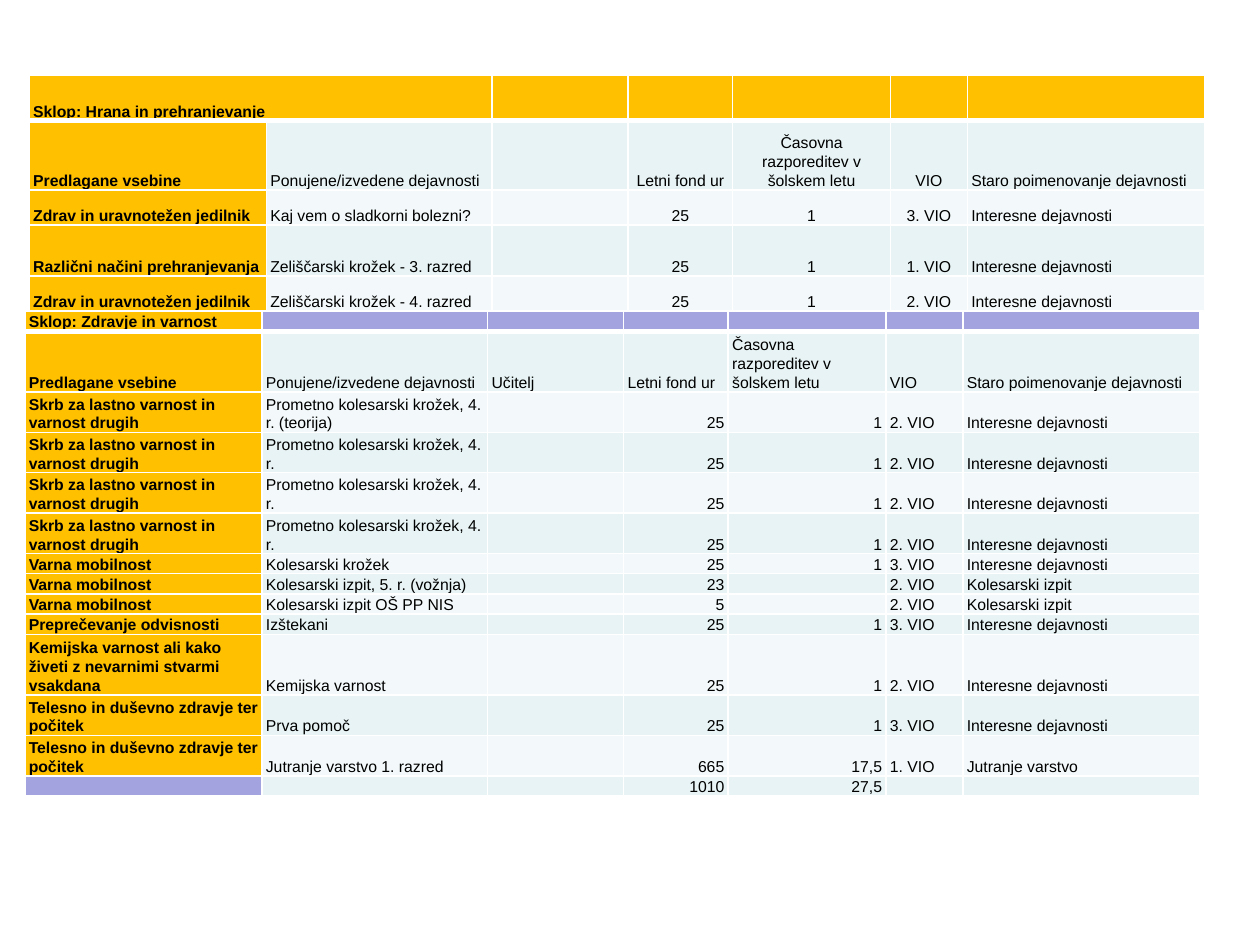
from lxml.etree import SubElement
from pptx import Presentation
from pptx.dml.color import RGBColor
from pptx.enum.text import MSO_ANCHOR, PP_ALIGN
from pptx.oxml.ns import qn
from pptx.util import Cm, Pt

GOLD = RGBColor(0xFF, 0xC0, 0x00)
LILAC = RGBColor(0xA3, 0xA3, 0xE0)
MINT = RGBColor(0xE7, 0xF3, 0xF4)
PALE = RGBColor(0xF3, 0xF9, 0xFA)
BLACK = RGBColor(0, 0, 0)
WHITE = RGBColor(0xFF, 0xFF, 0xFF)

COLS = [4.78, 4.55, 2.74, 2.11, 3.18, 1.55, 4.78]
CELL = {"vertical_anchor": MSO_ANCHOR.BOTTOM, "margin_left": Cm(0.08),
        "margin_right": Cm(0.08), "margin_top": 0, "margin_bottom": 0}
LINE = Cm(9.78) / 24
CLUB = "Interesne dejavnosti"
HEAD = ["Predlagane vsebine", "Ponujene/izvedene dejavnosti", "", "Letni fond ur",
        "Časovna razporeditev v šolskem letu", "VIO", "Staro poimenovanje dejavnosti"]
MENU = "Zdrav in uravnotežen jedilnik"
SAFETY = "Skrb za lastno varnost in varnost drugih"
BIKE = "Prometno kolesarski krožek, 4. r."
MOBILITY = "Varna mobilnost"
REST = "Telesno in duševno zdravje ter počitek"

food_rows = [
    ["Sklop: Hrana in prehranjevanje"] + [""] * 6,
    HEAD,
    [MENU, "Kaj vem o sladkorni bolezni?", "", "25", "1", "3. VIO", CLUB],
    ["Različni načini prehranjevanja", "Zeliščarski krožek - 3. razred", "",
     "25", "1", "1. VIO", CLUB],
    [MENU, "Zeliščarski krožek - 4. razred", "", "25", "1", "2. VIO", CLUB],
]
health_rows = [
    ["Sklop: Zdravje in varnost"] + [""] * 6,
    HEAD[:2] + ["Učitelj"] + HEAD[3:],
    [SAFETY, BIKE + " (teorija)", "", "25", "1", "2. VIO", CLUB],
    *[[SAFETY, BIKE, "", "25", "1", "2. VIO", CLUB]] * 3,
    [MOBILITY, "Kolesarski krožek", "", "25", "1", "3. VIO", CLUB],
    [MOBILITY, "Kolesarski izpit, 5. r. (vožnja)", "", "23", "", "2. VIO", "Kolesarski izpit"],
    [MOBILITY, "Kolesarski izpit OŠ PP NIS", "", "5", "", "2. VIO", "Kolesarski izpit"],
    ["Preprečevanje odvisnosti", "Izštekani", "", "25", "1", "3. VIO", CLUB],
    ["Kemijska varnost ali kako živeti z nevarnimi stvarmi vsakdana", "Kemijska varnost",
     "", "25", "1", "2. VIO", CLUB],
    [REST, "Prva pomoč", "", "25", "1", "3. VIO", CLUB],
    [REST, "Jutranje varstvo 1. razred", "", "665", "17,5", "1. VIO", "Jutranje varstvo"],
    ["", "", "", "1010", "27,5", "", ""],
]
food_heights = [Cm(h) for h in (0.91, 1.4, 0.71, 1.02, 0.71)]
health_heights = [int(n * LINE) for n in (1, 3, 2, 2, 2, 2, 1, 1, 1, 1, 3, 2, 2, 1)]
CENTRED = {3: PP_ALIGN.CENTER, 4: PP_ALIGN.CENTER, 5: PP_ALIGN.CENTER}
RIGHT = {3: PP_ALIGN.RIGHT, 4: PP_ALIGN.RIGHT}


def set_border(cell, side, width):
    ln = SubElement(cell._tc.get_or_add_tcPr(), qn(f"a:ln{side}"), w=str(Pt(width)))
    fill = SubElement(ln, qn("a:solidFill"))
    SubElement(fill, qn("a:srgbClr"), val=str(WHITE))


prs = Presentation()
prs.slide_width, prs.slide_height = Cm(25.4), Cm(19.05)
s = prs.slides.add_slide(prs.slide_layouts[6])

tables = [
    (0.59, 1.52, food_rows, food_heights, CENTRED, {}, GOLD),
    (0.5, 6.27, health_rows, health_heights, {}, RIGHT, LILAC),
]
for left, top, rows, heights, head_align, body_align, band in tables:
    table = s.shapes.add_table(len(rows), len(COLS), Cm(left), Cm(top),
                               Cm(sum(COLS)), sum(heights)).table
    table.first_row = table.horz_banding = False
    for column, width in zip(table.columns, COLS):
        column.width = Cm(width)
    for i, (row, height) in enumerate(zip(rows, heights)):
        table.rows[i].height = height
        aligns = head_align if i == 1 else body_align or head_align
        for j, text in enumerate(row):
            cell = table.cell(i, j)
            for name, value in CELL.items():
                setattr(cell, name, value)
            for side in "LRTB":
                thick = (i, side) in ((0, "B"), (1, "T"))
                set_border(cell, side, 3 if thick else 1)
            if j == 0:
                color = GOLD if text else LILAC
            else:
                color = band if i == 0 else MINT if i % 2 else PALE
            cell.fill.solid()
            cell.fill.fore_color.rgb = color
            p = cell.text_frame.paragraphs[0]
            p.line_spacing = 1.07
            p.alignment = aligns.get(j, PP_ALIGN.LEFT)
            if text:
                r = p.add_run()
                r.text = text
                font = {"name": "Arial", "size": Pt(9), "bold": j == 0}
                for name, value in font.items():
                    setattr(r.font, name, value)
                r.font.color.rgb = BLACK
            else:
                SubElement(p._p, qn("a:endParaRPr"), sz="900")
    if band == GOLD:
        table.cell(0, 0).merge(table.cell(0, 1))

prs.save("out.pptx")
